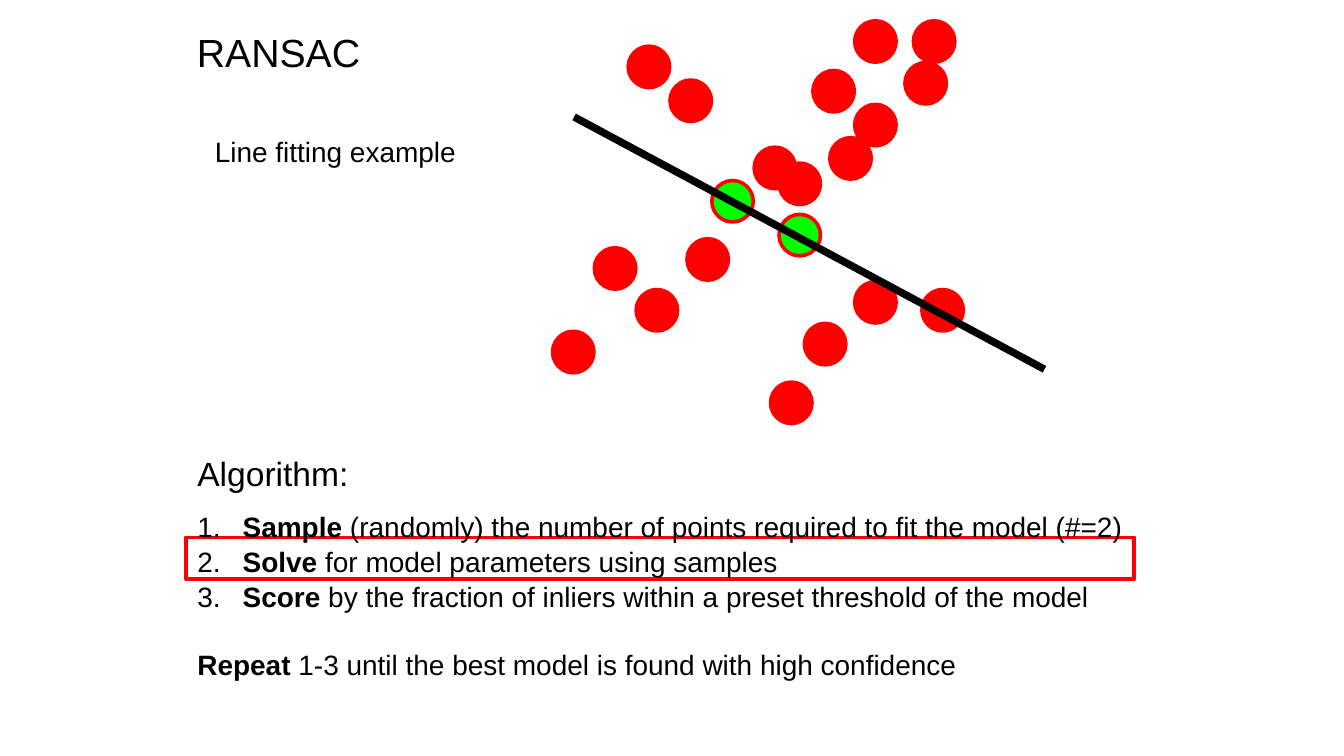
from dataclasses import dataclass

from lxml import etree
from pptx import Presentation
from pptx import util as u
from pptx.dml.color import RGBColor
from pptx.enum import shapes, text
from pptx.oxml import ns


@dataclass(frozen=True)
class Theme:
    font: str = "Arial"
    ink: str = "000000"
    point: str = "FF0000"
    sample: str = "00FF00"
    title: float = 21
    heading: float = 18
    body: float = 15
    heavy: float = 4
    frame: float = 2
    leading: float = 1.04


def add_span(para, words, size, color, font, bold=False):
    span = para.add_run()
    span.text = words
    span.font.size = u.Pt(size)
    span.font.name = font
    span.font.bold = bold
    span.font.color.rgb = RGBColor.from_string(color)


class Sketch:
    def __init__(self, page, theme):
        self.page = page
        self.theme = theme

    def shape(self, kind, left, top, width, height, fill=None, line=None, weight=0):
        item = self.page.shapes.add_shape(
            kind, u.Cm(left), u.Cm(top), u.Cm(width), u.Cm(height))
        item.shadow.inherit = False
        if fill:
            item.fill.solid()
            item.fill.fore_color.rgb = RGBColor.from_string(fill)
        else:
            item.fill.background()
        if line:
            item.line.color.rgb = RGBColor.from_string(line)
            item.line.width = u.Pt(weight)
        else:
            item.line.fill.background()

    def dot(self, left, top, fill, line=None):
        self.shape(shapes.MSO_SHAPE.OVAL, left, top, DOT, DOT, fill, line, self.theme.heavy)

    def frame(self, left, top, width, height):
        self.shape(shapes.MSO_SHAPE.RECTANGLE, left, top, width, height,
                   line=self.theme.point, weight=self.theme.frame)

    def line(self, x1, y1, x2, y2):
        item = self.page.shapes.add_connector(
            shapes.MSO_CONNECTOR.STRAIGHT, u.Cm(x1), u.Cm(y1), u.Cm(x2), u.Cm(y2))
        item.line.color.rgb = RGBColor.from_string(self.theme.ink)
        item.line.width = u.Pt(self.theme.heavy)
        etree.SubElement(item.element.spPr, ns.qn("a:effectLst"))

    def box(self, left, top, width, height, wrap=False):
        item = self.page.shapes.add_textbox(
            u.Cm(left), u.Cm(top), u.Cm(width), u.Cm(height))
        item.text_frame.word_wrap = wrap
        item.text_frame.auto_size = text.MSO_AUTO_SIZE.SHAPE_TO_FIT_TEXT
        return item.text_frame

    def para(self, box, spans, size, before=0, numbered=False, align=text.PP_ALIGN.LEFT):
        para = box.paragraphs[0]
        if para.runs:
            para = box.add_paragraph()
        para.alignment = align
        para.line_spacing = self.theme.leading
        para.space_before = u.Pt(before)
        if numbered:
            props = para._p.get_or_add_pPr()
            props.set("marL", str(u.Cm(0.71)))
            props.set("indent", str(-u.Cm(0.71)))
            etree.SubElement(props, ns.qn("a:buFont"), typeface=self.theme.font)
            etree.SubElement(props, ns.qn("a:buAutoNum"), type="arabicPeriod")
        for words, bold in spans:
            add_span(para, words, size=size, color=self.theme.ink,
                     font=self.theme.font, bold=bold)


DOT = 0.71
POINTS = [
    (17.46, 5.51), (16.19, 5.36), (11.27, 4.72), (12.06, 5.51), (10.48, 6.3),
    (15.4, 1.37), (15.72, 2.64), (13.02, 4.55), (16.19, 0.43), (14.76, 3.12),
    (14.29, 2.82), (17.3, 0.43), (16.19, 2.01), (17.14, 1.22), (11.91, 0.91),
    (15.24, 6.15), (14.6, 7.26), (12.7, 1.55),
]
SAMPLES = [(13.49, 3.45), (14.76, 4.09)]
STEPS = [
    ("Sample", " (randomly) the number of points required to fit the model (#=2)"),
    ("Solve", " for model parameters using samples"),
    ("Score", " by the fraction of inliers within a preset threshold of the model"),
]


def main():
    deck = Presentation()
    deck.slide_width, deck.slide_height = u.Cm(25.4), u.Cm(14.29)
    theme = Theme()
    sketch = Sketch(deck.slides.add_slide(deck.slide_layouts[6]), theme)

    for left, top in POINTS + SAMPLES:
        sketch.dot(left, top, theme.point, theme.point)
    for left, top in SAMPLES:
        sketch.dot(left, top, theme.sample)

    title = sketch.box(3.45, 0.38, 3.63, 1.14)
    sketch.para(title, [("RANSAC", False)], theme.title, align=text.PP_ALIGN.CENTER)

    sketch.line(10.85, 2.21, 19.74, 6.98)
    sketch.frame(3.51, 10.16, 17.93, 0.79)

    algorithm = sketch.box(3.48, 8.41, 18.44, 4.52, wrap=True)
    sketch.para(algorithm, [("Algorithm:", False)], theme.heading)
    for index, (verb, rest) in enumerate(STEPS):
        sketch.para(algorithm, [(" ", False), (verb, True), (rest, False)], theme.body,
                    before=0 if index else 8, numbered=True)
    sketch.para(algorithm, [
        ("Repeat", True),
        (" 1-3 until the best model is found with high confidence", False),
    ], theme.body, before=18)

    subtitle = sketch.box(3.81, 2.39, 5.13, 0.89)
    sketch.para(subtitle, [("Line fitting example", False)], theme.body)

    deck.save("out.pptx")


if __name__ == "__main__":
    main()
